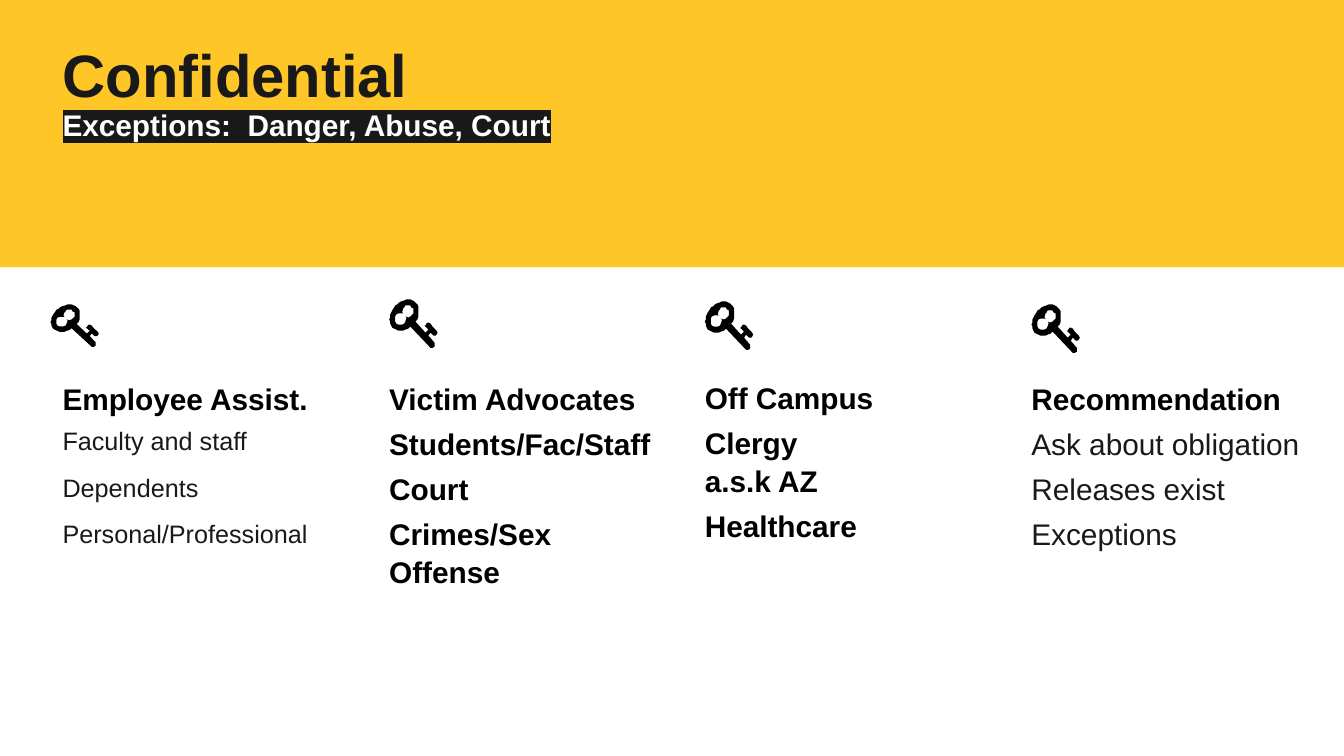
import pptx
import pptx.dml.color
import pptx.enum.shapes
import pptx.enum.text
import pptx.oxml
import pptx.oxml.ns
import pptx.util

# All lengths are counted in cells of a fine grid, 1333 columns by 750 rows
CELL = pptx.util.Inches(0.01)
COLUMNS, ROWS = 1333, 750
INK, BLACK, WHITE, GOLD = "191919", "000000", "FFFFFF", "FFC627"


def colour(code):
    return pptx.dml.color.RGBColor.from_string(code)


def write(box, text, size=21.3, color=BLACK, bold=True, highlight=None,
          line=1.05, before=0, after=0, first=False):
    """Add one formatted paragraph; the first one also prepares the box."""
    frame = box.text_frame
    if first:
        frame.word_wrap = True
        frame.auto_size = pptx.enum.text.MSO_AUTO_SIZE.NONE
        frame.vertical_anchor = pptx.enum.text.MSO_ANCHOR.TOP
        frame.margin_left = frame.margin_right = 0
        frame.margin_top = frame.margin_bottom = 0
    para = frame.paragraphs[0] if first else frame.add_paragraph()
    para.alignment = pptx.enum.text.PP_ALIGN.LEFT
    para.line_spacing = line
    para.space_before = pptx.util.Pt(before)
    para.space_after = pptx.util.Pt(after)
    # No bullet and no hanging indent
    properties = para._p.get_or_add_pPr()
    properties.set("marL", "0")
    properties.set("indent", "0")
    properties.append(pptx.oxml.parse_xml(
        "<a:buNone %s/>" % pptx.oxml.ns.nsdecls("a")))
    span = para.add_run()
    span.text = text
    span.font.name = "Arial"
    span.font.size = pptx.util.Pt(size)
    span.font.bold = bold
    span.font.color.rgb = colour(color)
    if highlight:
        mark = pptx.oxml.parse_xml(
            '<a:highlight %s><a:srgbClr val="%s"/></a:highlight>'
            % (pptx.oxml.ns.nsdecls("a"), highlight))
        fill = span._r.rPr.find(pptx.oxml.ns.qn("a:solidFill"))
        fill.addnext(mark)


deck = pptx.Presentation()
deck.slide_width, deck.slide_height = COLUMNS * CELL, ROWS * CELL
page = deck.slides.add_slide(deck.slide_layouts.get_by_name("Comparison"))
title, *bodies = page.placeholders

# Gold band behind the heading
band = page.shapes.add_shape(pptx.enum.shapes.MSO_SHAPE.RECTANGLE,
                             0, 0, COLUMNS * CELL, 265 * CELL)
band.shadow.inherit = False
band.fill.solid()
band.fill.fore_color.rgb = colour(GOLD)
band.line.fill.background()
title._element.addprevious(band._element)

# Heading and subheading
subtitle = page.shapes.add_textbox(0, 0, CELL, CELL)
for box, top, height in [(title, 46, 80), (subtitle, 110, 48)]:
    box.left, box.top = 62 * CELL, top * CELL
    box.width, box.height = 1221 * CELL, height * CELL
write(title, "Confidential", size=42.7, color=INK, highlight=GOLD,
      line=0.9, after=10.7, first=True)
write(subtitle, "Exceptions:  Danger, Abuse, Court", color=WHITE,
      highlight=INK, line=0.9, after=10.7, first=True)

# Key outline, in cells: the hole in the bow, then the outer edge
KEY_HOLE = [
    (19, 6), (21, 6), (22, 8), (24, 9), (24, 14), (22, 16), (21, 17),
    (19, 18), (16, 17), (17, 18), (17, 19), (16, 22), (15, 24), (13, 25),
    (9, 25), (7, 24), (6, 22), (6, 17), (7, 15), (9, 14), (14, 14),
    (13, 13), (13, 12), (14, 9), (15, 8), (16, 6)]
KEY_EDGE = [
    (17, 0), (15, 1), (12, 2), (10, 3), (8, 5), (6, 6), (5, 8), (3, 11),
    (2, 13), (1, 15), (1, 18), (0, 20), (1, 22), (1, 24), (2, 26), (3, 28),
    (5, 29), (7, 30), (9, 31), (14, 31), (16, 30), (19, 29), (21, 27),
    (40, 47), (41, 48), (43, 48), (45, 47), (45, 43), (39, 36), (41, 33),
    (44, 36), (46, 36), (47, 35), (48, 33), (47, 31), (45, 29), (43, 27),
    (41, 24), (39, 23), (38, 23), (37, 24), (36, 26), (35, 26), (36, 27),
    (39, 30), (36, 33), (26, 22), (28, 20), (29, 17), (29, 7), (28, 5),
    (26, 3), (25, 2), (23, 1), (21, 0)]

# Four columns: text left, top, width; key left, top, height; paragraphs
heading = dict()
plain = dict(color=INK, bold=False, before=5.3)
small = dict(plain, size=18, after=5.3)
strong = dict(before=5.3)
columns = [
    (62, 376, 260, 50, 302, 42,
     [("Employee Assist.", heading), ("Faculty and staff", small),
      ("Dependents", small), ("Personal/Professional", small)]),
    (386, 376, 260, 386, 297, 48,
     [("Victim Advocates", heading), ("Students/Fac/Staff", strong),
      ("Court", strong), ("Crimes/Sex Offense", strong)]),
    (699, 375, 260, 699, 299, 48,
     [("Off Campus", heading), ("Clergy", strong),
      ("a.s.k AZ", heading), ("Healthcare", strong)]),
    (1023, 376, 275, 1023, 302, 48,
     [("Recommendation", heading), ("Ask about obligation", plain),
      ("Releases exist", plain), ("Exceptions", plain)]),
]
for body, column in zip(bodies, columns):
    left, top, width, key_left, key_top, key_height, lines = column
    body.left, body.top = left * CELL, top * CELL
    body.width, body.height = width * CELL, (704 - top) * CELL
    for number, (text, look) in enumerate(lines):
        write(body, text, first=number == 0, **look)

    outline = page.shapes.build_freeform(*KEY_HOLE[0], scale=CELL)
    outline.add_line_segments(KEY_HOLE[1:], close=True)
    outline.move_to(*KEY_EDGE[0])
    outline.add_line_segments(KEY_EDGE[1:], close=True)
    key = outline.convert_to_shape(key_left * CELL, key_top * CELL)
    key.height = key_height * CELL
    key.shadow.inherit = False
    key.fill.solid()
    key.fill.fore_color.rgb = colour(BLACK)
    key.line.fill.background()

deck.save("out.pptx")
